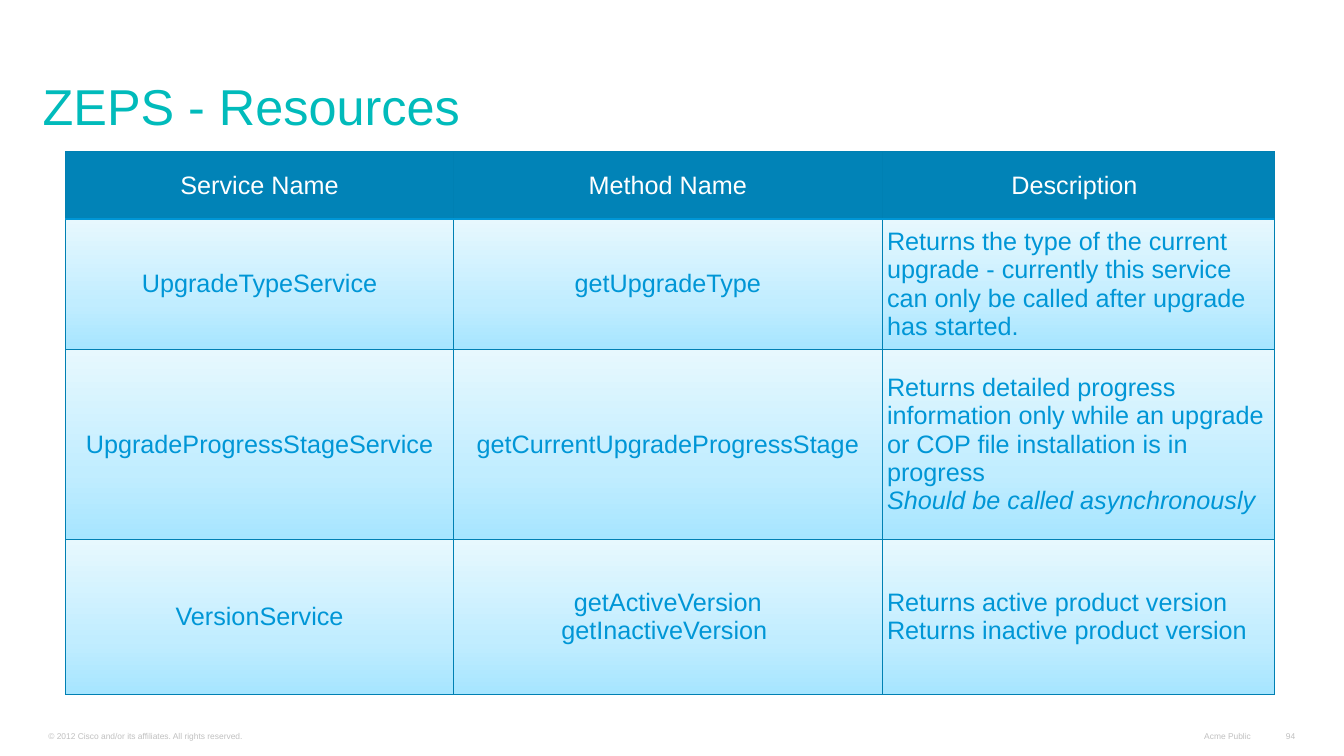
from dataclasses import dataclass

from lxml.etree import SubElement
from pptx import Presentation
from pptx.dml.color import RGBColor
from pptx.enum.text import MSO_ANCHOR as Anchor, MSO_AUTO_SIZE as AutoSize, PP_ALIGN as Align
from pptx.oxml.ns import qn
from pptx.util import Pt

# Content
TITLE = "ZEPS - Resources"
HEADER = ("Service Name", "Method Name", "Description ")
SERVICES = [
    ("UpgradeTypeService", "getUpgradeType",
     "Returns the type of the current upgrade - currently this service "
     "can only be called after upgrade has started."),
    ("UpgradeProgressStageService", "getCurrentUpgradeProgressStage",
     "Returns detailed progress information only while an upgrade "
     "or COP file installation is in progress\nShould be called asynchronously"),
    ("VersionService", "getActiveVersion\ngetInactiveVersion ",
     "Returns active product version\nReturns inactive product version"),
]
ITALIC_LINES = {"Should be called asynchronously"}
FOOTERS = [  # text, left, width, alignment, wrap
    ("© 2012 Cisco and/or its affiliates. All rights reserved.", 28, 359.5, Align.LEFT, True),
    ("Acme Public", 853.2, 46.8, Align.RIGHT, False),
    ("94", 911.5, 20.2, Align.RIGHT, False),
]

# Layout
SLIDE_SIZE = (960, 540)
TITLE_BOX = (24, 34, 901, 66)
TABLE_LEFT, TABLE_TOP = 46.8, 108.3
COLUMN_WIDTHS = (277.2, 306, 280)
ROW_HEIGHTS = (48.2, 92.9, 136, 110.8)
FOOTER_TOP, FOOTER_HEIGHT = 518.4, 13.7


@dataclass(frozen=True)
class Theme:
    font: str = "Arial"
    title: str = "01BBBB"
    header_fill: str = "0183B7"
    header_text: str = "FFFFFF"
    body_text: str = "0096D6"
    border: str = "0080B3"
    header_rule: str = "0096D6"
    footer: str = "C0C0C0"
    cell_gradient: tuple = ((0, "E7F8FE"), (65, "C1EDFF"), (100, "A6E5FF"))
    title_size: float = 36
    table_size: float = 18
    footer_size: float = 6
    border_width: float = 0.75
    rule_width: float = 2


THEME = Theme()


def style_font(paragraph, size, color):
    font = paragraph.font
    font.name, font.size = THEME.font, Pt(size)
    font.color.rgb = RGBColor.from_string(color)


def set_margins(target, horizontal, vertical):
    target.margin_left = target.margin_right = Pt(horizontal)
    target.margin_top = target.margin_bottom = Pt(vertical)


def add_border(properties, side, color, width):
    line = SubElement(properties, qn(f"a:ln{side}"), w=str(Pt(width)))
    SubElement(SubElement(line, qn("a:solidFill")), qn("a:srgbClr"), val=color)


def add_gradient(properties):
    gradient = SubElement(properties, qn("a:gradFill"), rotWithShape="1")
    stops = SubElement(gradient, qn("a:gsLst"))
    for position, color in THEME.cell_gradient:
        stop = SubElement(stops, qn("a:gs"), pos=str(position * 1000))
        SubElement(stop, qn("a:srgbClr"), val=color)
    SubElement(gradient, qn("a:lin"), ang=str(90 * 60000), scaled="0")


def fill_cell(cell, text, row, column):
    is_header = row == 0
    is_description = column == len(HEADER) - 1
    cell.text = text
    cell.vertical_anchor = Anchor.MIDDLE
    set_margins(cell, *((3.6, 2.9) if is_description else (0, 0)))
    for paragraph in cell.text_frame.paragraphs:
        paragraph.alignment = Align.LEFT if is_description and not is_header else Align.CENTER
        style_font(paragraph, THEME.table_size,
                   THEME.header_text if is_header else THEME.body_text)
        if paragraph.text in ITALIC_LINES:
            paragraph.font.italic = True

    # Borders go before the fill in the cell properties
    properties = cell._tc.get_or_add_tcPr()
    rule_side = {0: "B", 1: "T"}.get(row)
    for side in "LRTB":
        if side == rule_side:
            add_border(properties, side, THEME.header_rule, THEME.rule_width)
        else:
            add_border(properties, side, THEME.border, THEME.border_width)
    if is_header:
        cell.fill.solid()
        cell.fill.fore_color.rgb = RGBColor.from_string(THEME.header_fill)
    else:
        add_gradient(properties)


def add_title(slide):
    title = slide.shapes.title
    title.left, title.top, title.width, title.height = map(Pt, TITLE_BOX)
    frame = title.text_frame
    frame.text = TITLE
    frame.auto_size, frame.word_wrap = AutoSize.NONE, True
    frame.vertical_anchor = Anchor.BOTTOM
    set_margins(frame, 6.5, 3.6)
    paragraph = frame.paragraphs[0]
    paragraph.alignment, paragraph.line_spacing = Align.LEFT, 0.8
    style_font(paragraph, THEME.title_size, THEME.title)


def add_services_table(slide):
    rows = [HEADER, *SERVICES]
    table = slide.shapes.add_table(
        len(rows), len(HEADER), Pt(TABLE_LEFT), Pt(TABLE_TOP),
        Pt(sum(COLUMN_WIDTHS)), Pt(sum(ROW_HEIGHTS))).table
    table.first_row = table.horz_banding = False
    for column, width in zip(table.columns, COLUMN_WIDTHS):
        column.width = Pt(width)
    for row, height in zip(table.rows, ROW_HEIGHTS):
        row.height = Pt(height)
    for row, texts in enumerate(rows):
        for column, text in enumerate(texts):
            fill_cell(table.cell(row, column), text, row, column)


def add_footers(slide):
    for text, left, width, alignment, wrap in FOOTERS:
        box = slide.shapes.add_textbox(Pt(left), Pt(FOOTER_TOP), Pt(width), Pt(FOOTER_HEIGHT))
        frame = box.text_frame
        frame.text = text
        frame.word_wrap, frame.vertical_anchor = wrap, Anchor.BOTTOM
        set_margins(frame, 6.5, 2.9)
        paragraph = frame.paragraphs[0]
        paragraph.alignment = alignment
        style_font(paragraph, THEME.footer_size, THEME.footer)


def main():
    presentation = Presentation()
    presentation.slide_width, presentation.slide_height = map(Pt, SLIDE_SIZE)
    slide = presentation.slides.add_slide(presentation.slide_layouts.get_by_name("Title Only"))
    add_footers(slide)
    add_title(slide)
    add_services_table(slide)
    presentation.save("out.pptx")


if __name__ == "__main__":
    main()
